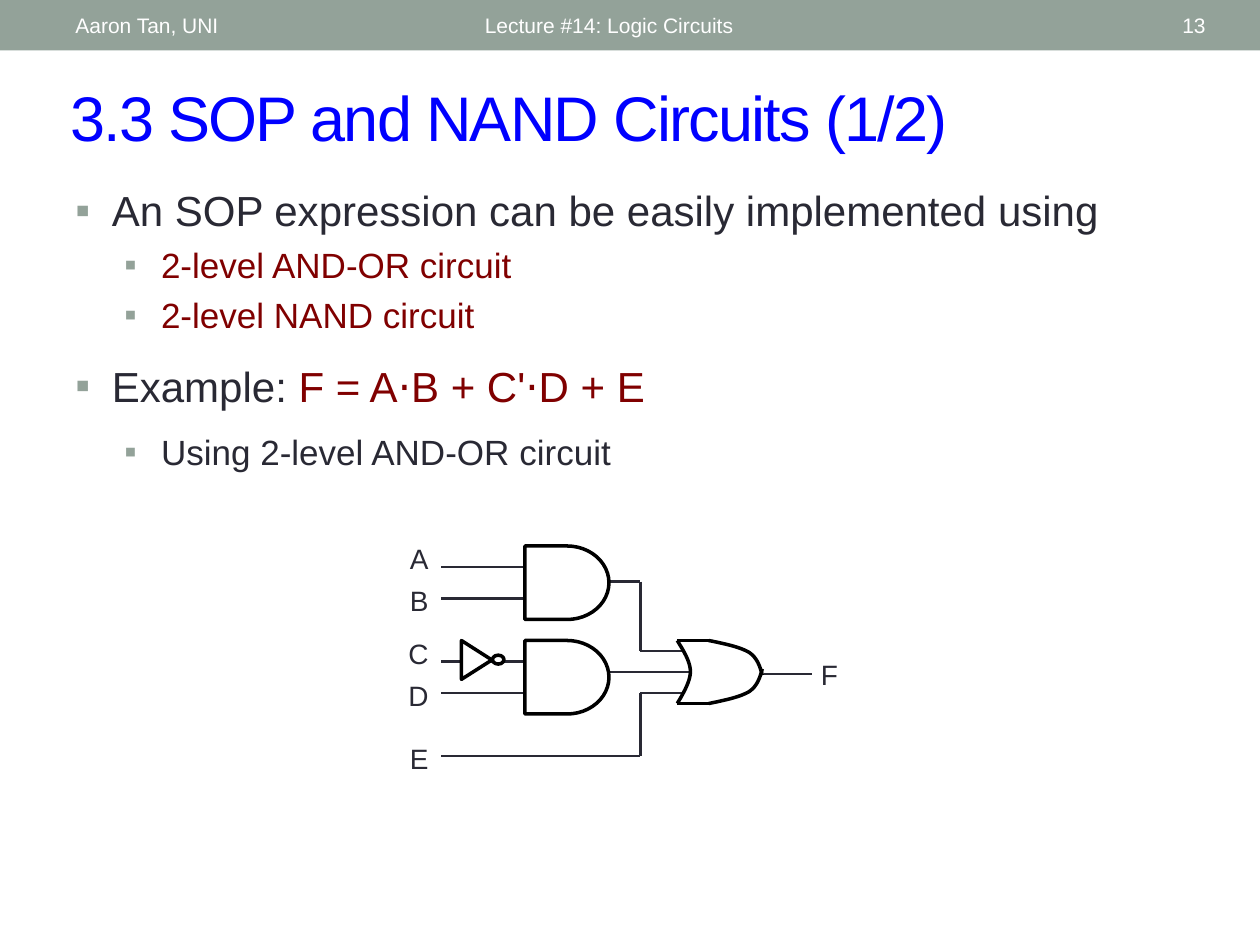
"""Build a lecture slide on SOP expressions with an AND-OR logic circuit."""
from lxml.etree import SubElement
from pptx import Presentation
from pptx.dml.color import RGBColor
from pptx.enum.shapes import MSO_CONNECTOR as Link, MSO_SHAPE as Form
from pptx.enum.text import MSO_ANCHOR as Anchor, PP_ALIGN as Align
from pptx.oxml.ns import qn
from pptx.util import Inches, Pt

SAGE = RGBColor(0x93, 0xA2, 0x99)
BLUE = RGBColor(0x00, 0x00, 0xFF)
INK = RGBColor(0x29, 0x29, 0x34)
RED = RGBColor(0x80, 0x00, 0x00)
WHITE = RGBColor(0xFF, 0xFF, 0xFF)
BLACK = RGBColor(0x00, 0x00, 0x00)

CELL = Inches(1) / 12
WIDE, HIGH = 120, 90


def grid(*spots):
    return [round(spot * CELL) for spot in spots]


def write(box, paras, anchor=Anchor.TOP, align=Align.LEFT):
    frame = slide.shapes.add_textbox(*grid(*box)).text_frame
    for name, value in {"word_wrap": True, "vertical_anchor": anchor}.items():
        setattr(frame, name, value)
    for row, runs in enumerate(paras):
        para = frame.add_paragraph() if row else frame.paragraphs[0]
        para.alignment = align
        for text, size, tone in runs:
            run = para.add_run()
            run.text = text
            run.font.color.rgb = tone
            for name, value in {"name": "Arial", "size": Pt(size)}.items():
                setattr(run.font, name, value)
    return frame.paragraphs


deck = Presentation()
for name, value in {"slide_width": WIDE, "slide_height": HIGH}.items():
    setattr(deck, name, grid(value)[0])
slide = deck.slides.add_slide(deck.slide_layouts[6])
shapes = slide.shapes

band = shapes.add_shape(Form.RECTANGLE, *grid(0, 0, WIDE, 4.8))
band.shadow.inherit = False
band.fill.solid()
band.fill.fore_color.rgb = SAGE
band.line.fill.background()

for left, width, text, align in [
    (45, 54, "Lecture #14: Logic Circuits", Align.LEFT),
    (104.6, 11.4, "13", Align.RIGHT),
    (6, 38, "Aaron Tan, UNI", Align.LEFT),
]:
    write((left, 0.25, width, 4.3), [[(text, 12, WHITE)]], Anchor.MIDDLE, align)

title = write((5.5, 6.85, 108.8, 8.4),
              [[("3.3 SOP and NAND Circuits (1/2)", 36, BLUE)]], Anchor.MIDDLE)
title[0].runs[0].font._element.set("spc", "-100")

points = [
    (0, 0.24, [("An SOP expression can be easily implemented using", 24, INK)]),
    (1, 0.24, [("2-level AND-OR circuit", 20, RED)]),
    (1, 0.24, [("2-level NAND circuit", 20, RED)]),
    (0, 0.58, [("Example:", 24, INK), (" F = A⋅B + C'⋅D + E", 24, RED)]),
    (1, 0.58, [("Using 2-level AND-OR circuit", 20, INK)]),
]
body = write((6, 17, 108, 31.6), [runs for _, _, runs in points])
for para, (level, gap, runs) in zip(body, points):
    para.level = level
    para.space_before = Pt(gap * runs[0][1])
    props = para._p.get_or_add_pPr()
    for name, value in {"marL": 0.29 + 0.39 * level, "indent": -0.29}.items():
        props.set(name, str(Inches(value)))
    tint = SubElement(SubElement(props, qn("a:buClr")), qn("a:srgbClr"))
    tint.set("val", str(SAGE))
    SubElement(props, qn("a:buFont")).set("typeface", "Arial")
    SubElement(props, qn("a:buChar")).set("char", "▪")

for text, top in zip("ABCDE", (51, 55, 60, 64, 70)):
    write((37, top, 5, 4.4), [[(text, 16, INK)]], align=Align.RIGHT)
write((77, 62, 5.8, 4.4), [[("F", 16, INK)]])

wires = [(42, row, 50, row) for row in (54, 57, 63, 66)] + [
    (58, 55.4, 61, 55.4), (61, 55.4, 61, 62), (61, 62, 65, 62),
    (58, 64, 65.7, 64), (42, 72, 61, 72), (61, 66, 61, 72),
    (61, 66, 65, 66), (72.8, 64.2, 77.3, 64.2),
]
edges = [(64.5, row, 67.5, row) for row in (61, 67)]
for ends, tone, weight in ([(wire, INK, 1.5) for wire in wires]
                           + [(edge, BLACK, 2) for edge in edges]):
    wire = shapes.add_connector(Link.STRAIGHT, *grid(*ends))
    wire.line.color.rgb = tone
    wire.line.width = Pt(weight)
    SubElement(wire._element.spPr, qn("a:effectLst"))

back = [(64.5, 61), (65.1, 62), (65.75, 63), (65.75, 64),
        (65.75, 65), (64.8, 66.5), (64.5, 67)]
upper = [(67.5, 61), (69, 61.3), (70.4, 61.6), (71.3, 62.1),
         (72.1, 62.6), (72.4, 63.5), (72.6, 64.3)]
lower = [(x, 128 - y) for x, y in upper]
parts = []
for curve in (back, upper, lower):
    dots = []
    for start in (0, 3):
        knots = curve[start:start + 4]
        for step in range(13):
            t = step / 12
            shares = ((1 - t) ** 3, 3 * t * (1 - t) ** 2, 3 * t * t * (1 - t), t ** 3)
            dots.append([sum(s * knot[axis] for s, knot in zip(shares, knots))
                         for axis in (0, 1)])
    pen = shapes.build_freeform(*grid(*dots[0]))
    pen.add_line_segments([grid(*dot) for dot in dots[1:]], close=False)
    parts.append((pen.convert_to_shape(), False))

for form, box, turn, solid in [
    (Form.FLOWCHART_DELAY, (50, 52, 8, 7), 0, False),
    (Form.FLOWCHART_DELAY, (50, 61, 8, 7), 0, False),
    (Form.FLOWCHART_MERGE, (43.55, 61.4, 3.7, 2.9), 270, True),
    (Form.OVAL, (46.9, 62.4, 1.1, 0.85), 0, True),
]:
    gate = shapes.add_shape(form, *grid(*box))
    gate.rotation = turn
    parts.append((gate, solid))

for part, solid in parts:
    part.shadow.inherit = False
    if solid:
        part.fill.solid()
        part.fill.fore_color.rgb = WHITE
    else:
        part.fill.background()
    part.line.color.rgb = BLACK
    part.line.width = Pt(2)

deck.save("out.pptx")
